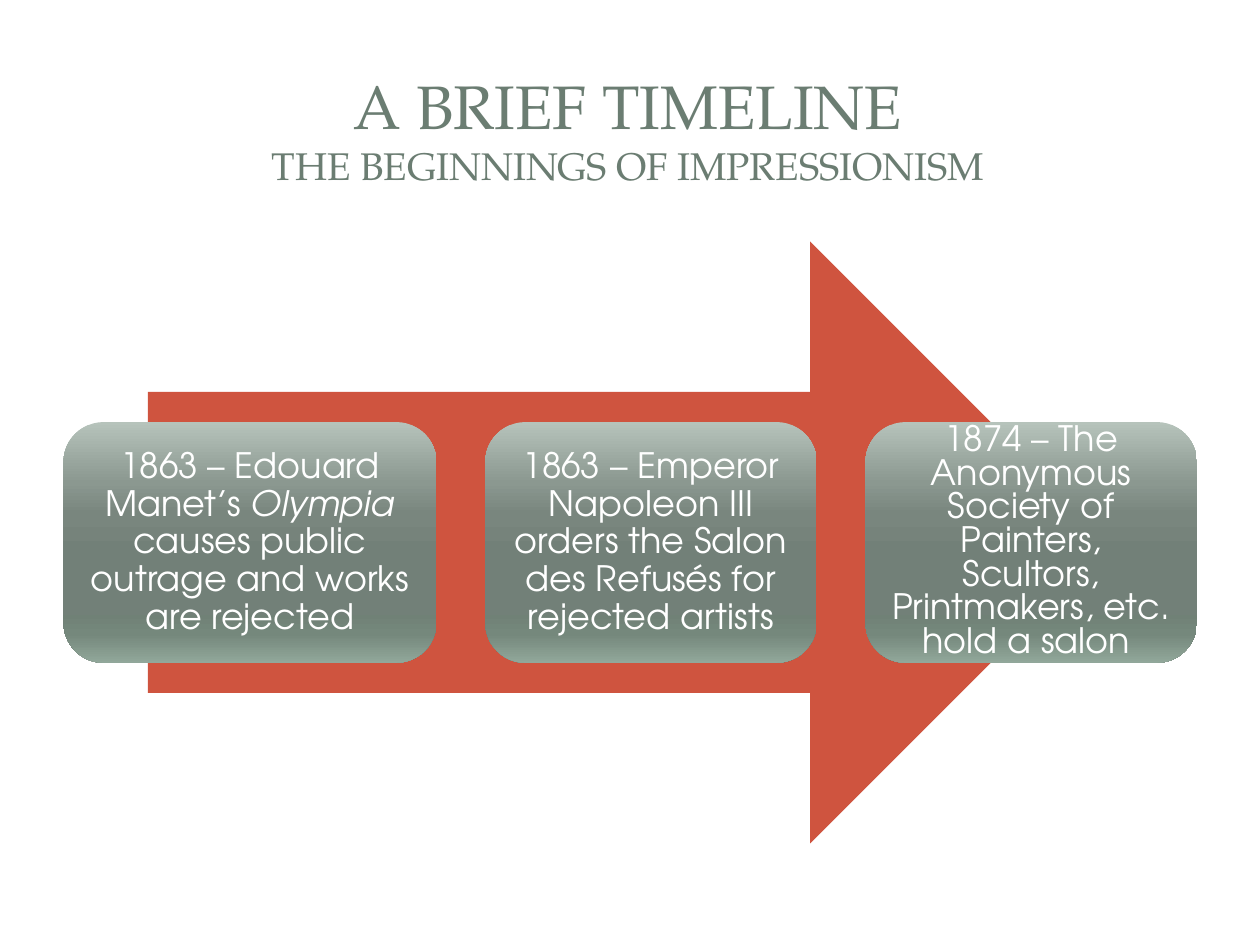
from copy import deepcopy
from dataclasses import dataclass
from typing import Any

from pptx import Presentation
from pptx import util as u
from pptx.dml.color import RGBColor
from pptx.enum import shapes, text
from pptx.oxml.ns import qn

WHITE = RGBColor(0xFF, 0xFF, 0xFF)
SAGE = RGBColor(0x6B, 0x7D, 0x72)
RUST = RGBColor(0xCF, 0x54, 0x3F)
CARD_STOPS = [
    (0, RGBColor(0xB6, 0xC3, 0xBB)),
    (0.25, RGBColor(0x8B, 0x98, 0x90)),
    (0.38, RGBColor(0x79, 0x86, 0x7E)),
    (0.55, RGBColor(0x72, 0x80, 0x78)),
    (0.8, RGBColor(0x70, 0x81, 0x76)),
    (0.88, RGBColor(0x75, 0x88, 0x7C)),
    (1, RGBColor(0x91, 0xA7, 0x9A)),
]
TITLE_FONT = "TeX Gyre Pagella"
CARD_FONT = "TeX Gyre Adventor"

CARD_LEFT, CARD_TOP, CARD_HEIGHT, CARD_GAP = 36.3, 241.2, 137.6, 27.9
FRAME_FORMAT = {
    "word_wrap": True,
    "auto_size": text.MSO_AUTO_SIZE.NONE,
    "vertical_anchor": text.MSO_ANCHOR.MIDDLE,
}
CARD_INSETS = {f"margin_{side}": u.Pt(6) for side in ("left", "top", "right", "bottom")}


@dataclass
class Event:
    width: float
    line_spacing: float
    phrases: list[tuple[str, bool]]  # wording, italic


EVENTS = [
    Event(213.1, 0.9, [
        ("1863 – Edouard Manet’s ", False),
        ("Olympia", True),
        (" causes public outrage and works are rejected", False),
    ]),
    Event(189.4, 0.9, [
        ("1863 – Emperor Napoleon III orders the Salon des Refusés for rejected artists", False),
    ]),
    Event(189.4, 0.8, [
        ("1874 – The Anonymous Society of Painters, Scultors, Printmakers, etc. hold a salon ", False),
    ]),
]


def apply_format(target: Any, values: dict[str, Any]) -> None:
    for name, value in values.items():
        setattr(target, name, value)


def add_run(paragraph: Any, wording: str, color: RGBColor, **font_format: Any) -> None:
    run = paragraph.add_run()
    run.text = wording
    apply_format(run.font, font_format)
    run.font.color.rgb = color


def add_plain_shape(slide: Any, kind: Any, *box: float) -> Any:
    shape = slide.shapes.add_shape(kind, *map(u.Pt, box))
    shape.shadow.inherit = False
    shape.line.fill.background()
    return shape


def fill_gradient(shape: Any, stops: list[tuple[float, RGBColor]]) -> None:
    """Fill from top to bottom, with one stop for each entry."""
    shape.fill.gradient()
    shape.fill.gradient_angle = 270
    stop_list = shape._element.spPr.find(qn("a:gradFill")).find(qn("a:gsLst"))
    while len(stop_list) < len(stops):
        stop_list.append(deepcopy(stop_list[0]))
    for stop, (position, color) in zip(shape.fill.gradient_stops, stops):
        stop.position = position
        stop.color.rgb = color


def add_card(slide: Any, event: Event, left: float) -> None:
    card = add_plain_shape(slide, shapes.MSO_SHAPE.ROUNDED_RECTANGLE,
                           left, CARD_TOP, event.width, CARD_HEIGHT)
    fill_gradient(card, CARD_STOPS)
    apply_format(card.text_frame, FRAME_FORMAT | CARD_INSETS)
    paragraph = card.text_frame.paragraphs[0]
    apply_format(paragraph, {"alignment": text.PP_ALIGN.CENTER,
                             "line_spacing": event.line_spacing})
    for wording, italic in event.phrases:
        add_run(paragraph, wording, WHITE, name=CARD_FONT, size=u.Pt(20), italic=italic)


def add_title(slide: Any) -> None:
    title = slide.shapes.title
    apply_format(title, {"left": u.Pt(33.8), "top": u.Pt(32.4),
                         "width": u.Pt(650.2), "height": u.Pt(82.1)})
    apply_format(title.text_frame, FRAME_FORMAT)
    paragraph = title.text_frame.paragraphs[0]
    paragraph.alignment = text.PP_ALIGN.CENTER
    add_run(paragraph, "A BRIEF TIMELINE", SAGE, name=TITLE_FONT, size=u.Pt(35))
    paragraph.add_line_break()
    add_run(paragraph, "THE BEGINNINGS OF IMPRESSIONISM", SAGE, name=TITLE_FONT, size=u.Pt(22))


def main() -> None:
    presentation = Presentation()
    apply_format(presentation, {"slide_width": u.Pt(720), "slide_height": u.Pt(540)})
    slide = presentation.slides.add_slide(presentation.slide_layouts[5])

    add_title(slide)

    # Arrow behind the events
    arrow = add_plain_shape(slide, shapes.MSO_SHAPE.RIGHT_ARROW, 84.5, 138, 550.5, 344)
    arrow.fill.solid()
    arrow.fill.fore_color.rgb = RUST

    # Event cards, left to right
    left = CARD_LEFT
    for event in EVENTS:
        add_card(slide, event, left)
        left += event.width + CARD_GAP

    presentation.save("out.pptx")


if __name__ == "__main__":
    main()
